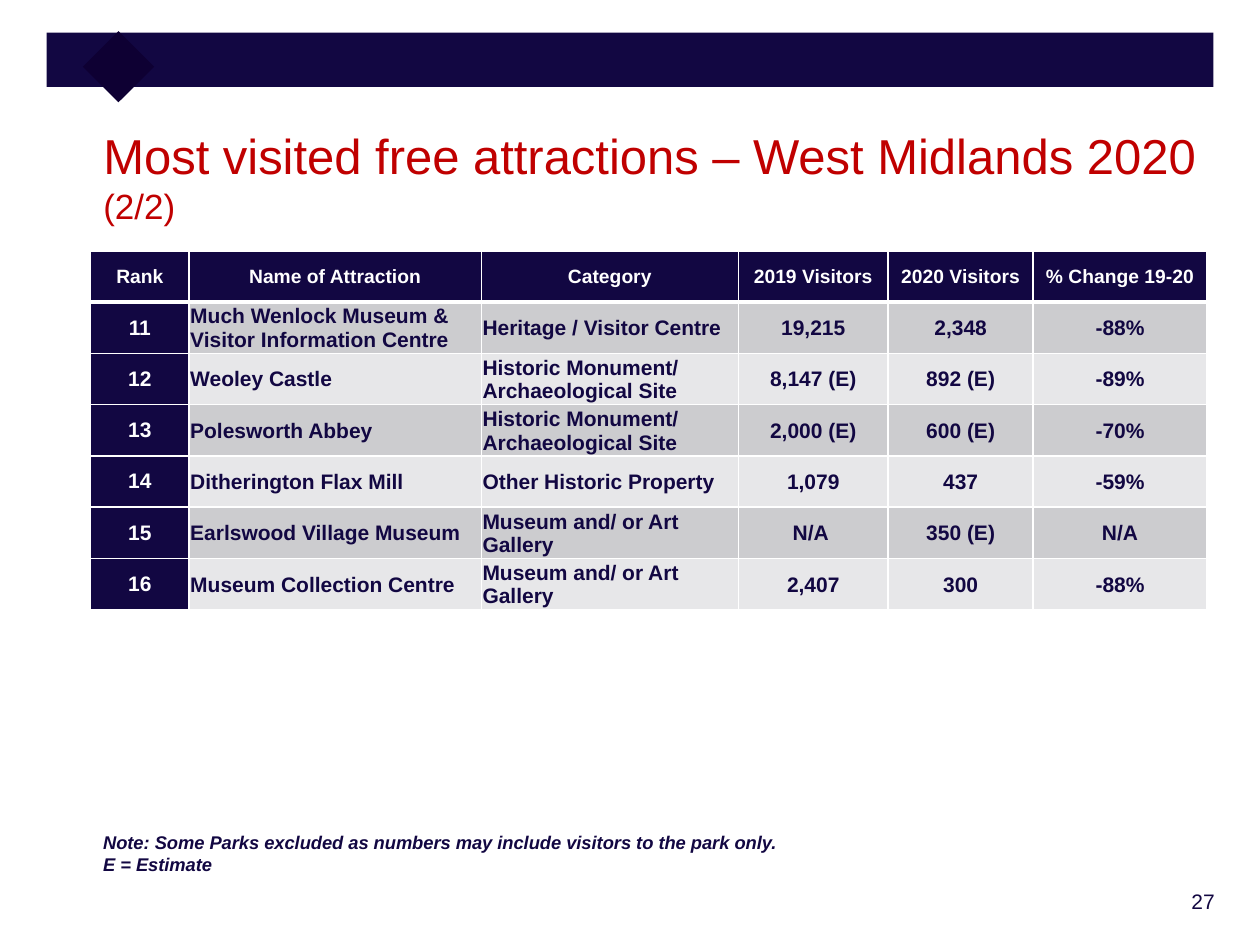
from dataclasses import dataclass

from lxml.etree import SubElement
from pptx import Presentation
from pptx.dml.color import RGBColor
from pptx.enum.shapes import MSO_SHAPE
from pptx.enum.text import MSO_ANCHOR, PP_ALIGN
from pptx.oxml.ns import qn
from pptx.slide import Slide
from pptx.util import Inches, Pt

HEADINGS = ["Rank", "Name of Attraction", "Category",
            "2019 Visitors", "2020 Visitors", "% Change 19-20"]
ATTRACTIONS = [
    ["11", "Much Wenlock Museum & Visitor Information Centre",
     "Heritage / Visitor Centre", "19,215", "2,348", "-88%"],
    ["12", "Weoley Castle",
     "Historic Monument/ Archaeological Site", "8,147 (E)", "892 (E)", "-89%"],
    ["13", "Polesworth Abbey",
     "Historic Monument/ Archaeological Site", "2,000 (E)", "600 (E)", "-70%"],
    ["14", "Ditherington Flax Mill",
     "Other Historic Property", "1,079", "437", "-59%"],
    ["15", "Earlswood Village Museum",
     "Museum and/ or Art Gallery", "N/A ", "350 (E)", "N/A"],
    ["16", "Museum Collection Centre",
     "Museum and/ or Art Gallery", "2,407", "300", "-88%"],
]
COLUMN_WIDTHS = [0.78, 2.32, 2.04, 1.19, 1.15, 1.38]
TABLE_HEIGHT = 2.85


def rgb(value):
    """Turn a hex string into a colour."""
    return RGBColor.from_string(value)


def write(paragraph, text, size, color, font="Arial", bold=False, italic=False,
          align=PP_ALIGN.LEFT):
    """Add a formatted run to a paragraph."""
    paragraph.alignment = align
    run = paragraph.add_run()
    run.text = text
    run.font.name = font
    run.font.size = Pt(size)
    run.font.bold = bold
    run.font.italic = italic
    run.font.color.rgb = rgb(color)


def draw_border(cell, side, points, color):
    """Add one solid border line to a cell."""
    line = SubElement(cell._tc.get_or_add_tcPr(), qn(f"a:ln{side}"), w=str(Pt(points)))
    fill = SubElement(line, qn("a:solidFill"))
    SubElement(fill, qn("a:srgbClr"), val=color)


@dataclass
class AttractionsSlide:
    """Hold the style and the slide being built."""

    slide: Slide
    navy: str = "120742"
    dark: str = "0E0033"
    red: str = "C00000"
    white: str = "FFFFFF"
    bands: tuple = ("CCCCCF", "E7E7E9")

    def block(self, left, top, width, height, color, rotation=0):
        """Draw a plain filled rectangle."""
        block = self.slide.shapes.add_shape(
            MSO_SHAPE.RECTANGLE, Inches(left), Inches(top), Inches(width), Inches(height))
        block.shadow.inherit = False
        block.fill.solid()
        block.fill.fore_color.rgb = rgb(color)
        block.line.fill.background()
        block.rotation = rotation

    def title(self, heading, part):
        """Fill the title with a heading and a smaller part number."""
        title = self.slide.shapes.title
        title.left, title.top = Inches(0.72), Inches(0.95)
        title.width, title.height = Inches(8.91), Inches(0.89)
        frame = title.text_frame
        frame.word_wrap = True
        frame.vertical_anchor = MSO_ANCHOR.MIDDLE
        frame.margin_right = Inches(0.05)
        paragraph = frame.paragraphs[0]
        write(paragraph, heading, 28, self.red)
        paragraph.add_line_break()
        write(paragraph, part, 20, self.red)

    def text(self, left, top, width, height, lines, size, **style):
        """Add a text box with one paragraph per line."""
        box = self.slide.shapes.add_textbox(
            Inches(left), Inches(top), Inches(width), Inches(height))
        frame = box.text_frame
        frame.word_wrap = True
        for index, line in enumerate(lines):
            paragraph = frame.add_paragraph() if index else frame.paragraphs[0]
            write(paragraph, line, size, self.navy, **style)

    def cell(self, cell, text, row, column):
        """Format one table cell by its row and column."""
        heading = row == 0
        label = heading or column == 0
        side_margin = 0.05 if label else 0.01
        cell.margin_left = cell.margin_right = Inches(side_margin)
        cell.margin_top = Inches(side_margin)
        cell.margin_bottom = Inches(0.05 if label else 0)
        cell.vertical_anchor = MSO_ANCHOR.MIDDLE
        for side in "LRTB":
            under_heading = (row, side) in ((0, "B"), (1, "T"))
            draw_border(cell, side, 3 if under_heading else 1, self.white)
        cell.fill.solid()
        cell.fill.fore_color.rgb = rgb(self.navy if label else self.bands[(row - 1) % 2])
        left_aligned = not heading and column in (1, 2)
        write(cell.text_frame.paragraphs[0], text, 11 if heading else 12,
              self.white if label else self.navy, bold=True,
              align=PP_ALIGN.LEFT if left_aligned else PP_ALIGN.CENTER)

    def table(self, left, top, widths, height, records):
        """Add the ranking table."""
        table = self.slide.shapes.add_table(
            len(records), len(widths), Inches(left), Inches(top),
            Inches(sum(widths)), Inches(height)).table
        for column, width in zip(table.columns, widths):
            column.width = Inches(width)
        for row, record in enumerate(records):
            table.rows[row].height = Inches(height / len(records))
            for column, text in enumerate(record):
                self.cell(table.cell(row, column), text, row, column)


def main():
    """Build and save the slide."""
    presentation = Presentation()
    presentation.slide_width, presentation.slide_height = Inches(10), Inches(7.5)
    page = AttractionsSlide(presentation.slides.add_slide(presentation.slide_layouts[5]))
    page.block(0.37, 0.26, 9.26, 0.43, page.navy)
    page.block(0.74, 0.33, 0.4, 0.4, page.dark, rotation=45)
    page.title("Most visited free attractions – West Midlands 2020", "(2/2)")
    page.table(0.72, 1.99, COLUMN_WIDTHS, TABLE_HEIGHT, [HEADINGS, *ATTRACTIONS])
    page.text(0.72, 6.55, 8.65, 0.45,
              ["Note: Some Parks excluded as numbers may include visitors to the park only.",
               "E = Estimate"], 10.5, bold=True, italic=True)
    page.text(8.53, 7, 1.21, 0.36, ["27"], 12, align=PP_ALIGN.RIGHT)
    presentation.save("out.pptx")


if __name__ == "__main__":
    main()
